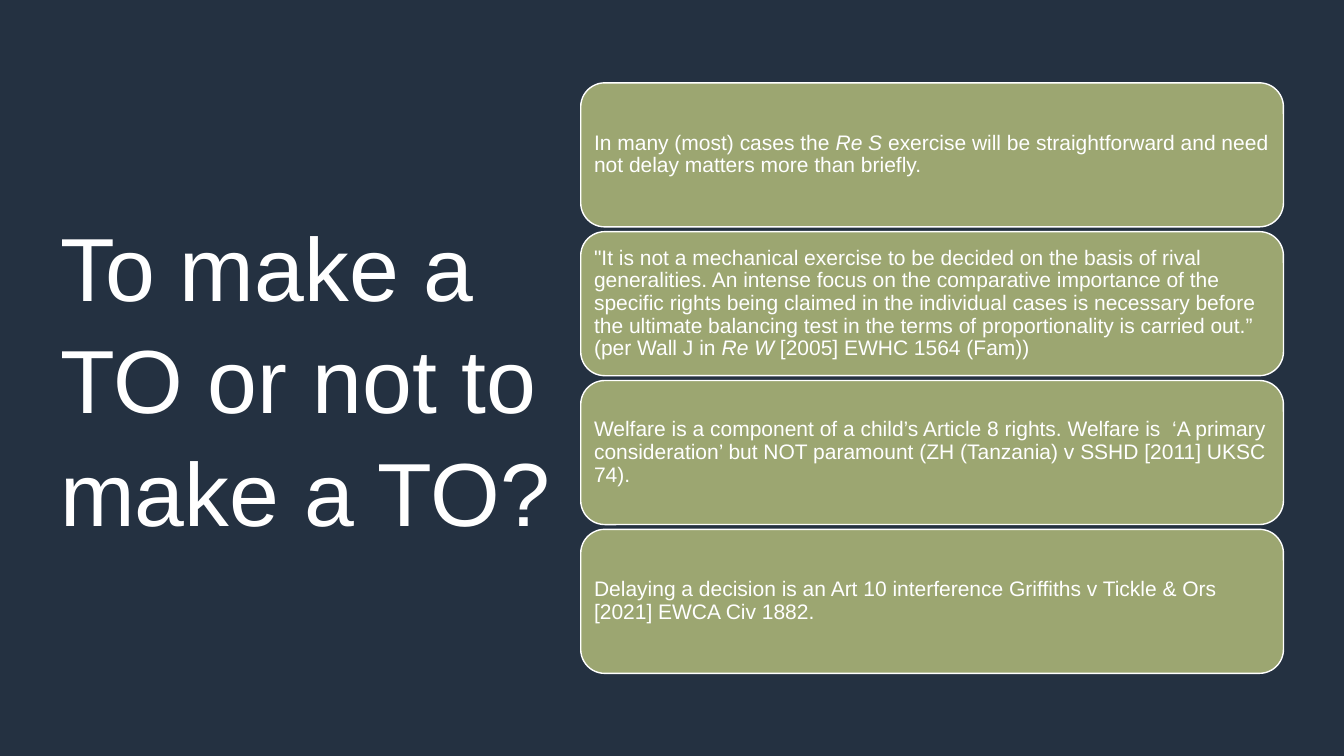
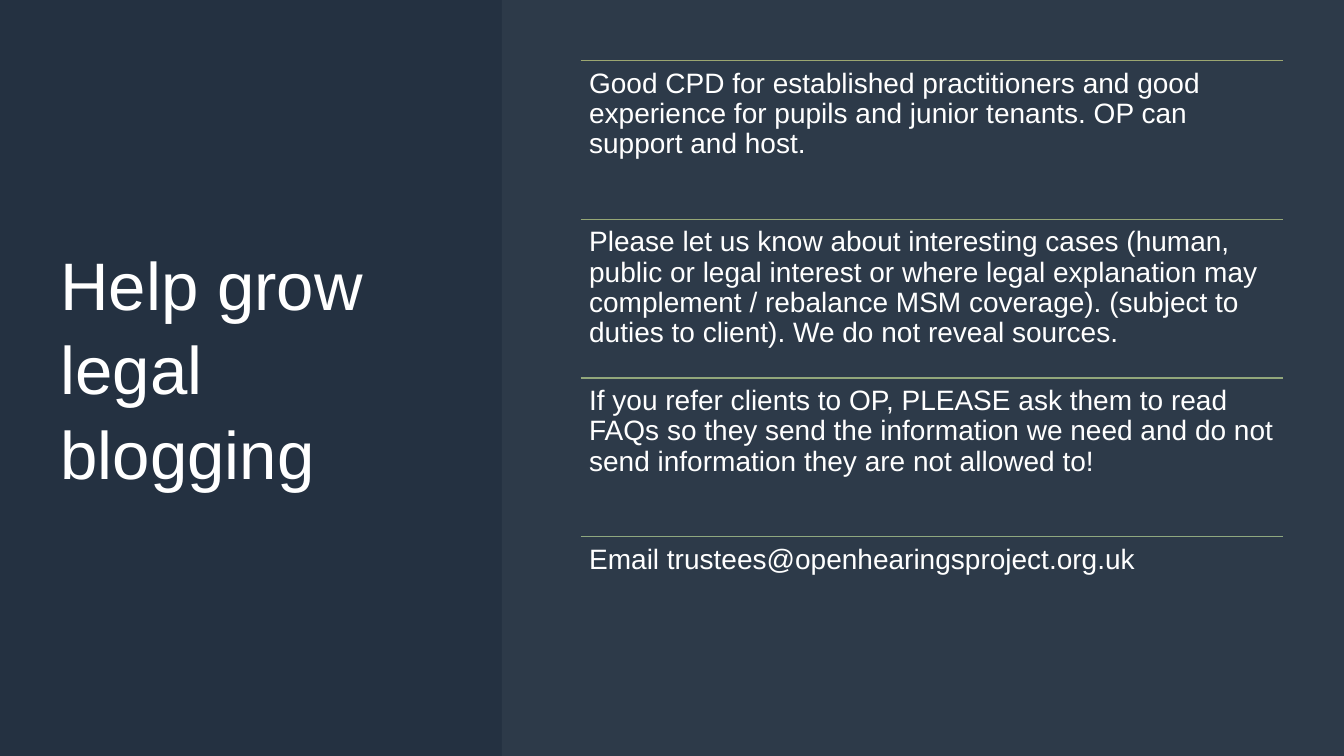
"""Build two dark slides: stacked cards and ruled notes beside a title."""
from lxml import etree
from pptx import Presentation
from pptx import util as u
from pptx.dml.color import RGBColor
from pptx.enum import shapes, text
from pptx.oxml.ns import qn

FONT = "Arial"
NAVY, WHITE, OLIVE, MIST = "243141", "FFFFFF", "9CA671", "E5EAF0"
WIDTH, HEIGHT = 960, 540
MARGIN = 43.2
COLUMN_LEFT, COLUMN_WIDTH = 414.8, 502


def colour(value):
    return RGBColor.from_string(value)


class Slides:
    def __init__(self):
        self.deck = Presentation()
        self.deck.slide_width = u.Pt(WIDTH)
        self.deck.slide_height = u.Pt(HEIGHT)
        self.page = None

    def new_page(self):
        self.page = self.deck.slides.add_slide(self.deck.slide_layouts[6])
        fill = self.page.background.fill
        fill.solid()
        fill.fore_color.rgb = colour(NAVY)

    def add_text(self, box, spans, size, inset, anchor, spacing):
        frame = box.text_frame
        frame.word_wrap = True
        frame.vertical_anchor = anchor
        frame.margin_left = frame.margin_right = u.Pt(inset)
        frame.margin_top = frame.margin_bottom = u.Pt(inset)
        para = frame.paragraphs[0]
        para.alignment = text.PP_ALIGN.LEFT
        para.line_spacing = spacing
        for words, italic in spans:
            span = para.add_run()
            span.text = words
            span.font.name = FONT
            span.font.size = u.Pt(size)
            span.font.italic = italic
            span.font.color.rgb = colour(WHITE)

    def text_box(self, left, top, width, height):
        return self.page.shapes.add_textbox(
            u.Pt(left), u.Pt(top), u.Pt(width), u.Pt(height))

    def title(self, words, top, width, height, size):
        box = self.text_box(MARGIN, top, width, height)
        self.add_text(box, [(words, False)], size, 0, text.MSO_ANCHOR.MIDDLE, 1.05)

    def shape(self, kind, left, top, width, height, fill):
        box = self.page.shapes.add_shape(
            kind, u.Pt(left), u.Pt(top), u.Pt(width), u.Pt(height))
        box.shadow.inherit = False
        box.fill.solid()
        box.fill.fore_color.rgb = colour(fill)
        return box

    def panel(self, left, opacity):
        box = self.shape(shapes.MSO_SHAPE.RECTANGLE, left, 0, WIDTH - left, HEIGHT, MIST)
        box.line.fill.background()
        tint = box._element.spPr.find(qn("a:solidFill"))[0]
        etree.SubElement(tint, qn("a:alpha"), val=str(opacity * 1000))

    def card(self, top, height, spans):
        box = self.shape(shapes.MSO_SHAPE.ROUNDED_RECTANGLE,
                         COLUMN_LEFT, top, COLUMN_WIDTH, height, OLIVE)
        box.line.color.rgb = colour(WHITE)
        box.line.width = u.Pt(1)
        self.add_text(box, spans, 15, 4.5, text.MSO_ANCHOR.MIDDLE, 0.9)

    def rule(self, top, shade):
        line = self.page.shapes.add_connector(
            shapes.MSO_CONNECTOR.STRAIGHT, u.Pt(COLUMN_LEFT), u.Pt(top),
            u.Pt(COLUMN_LEFT + COLUMN_WIDTH), u.Pt(top))
        line.line.color.rgb = colour(shade)
        line.line.width = u.Pt(1)
        etree.SubElement(line._element.spPr, qn("a:effectLst"))

    def note(self, top, height, words, shade):
        self.rule(top, shade)
        box = self.text_box(COLUMN_LEFT, top, COLUMN_WIDTH, height)
        self.add_text(box, [(words, False)], 20, 6, text.MSO_ANCHOR.TOP, 0.9)


CARDS = [
    [("In many (most) cases the ", False), ("Re S", True),
     (" exercise will be straightforward and need not delay matters more than briefly.",
      False)],
    [("\"It is not a mechanical exercise to be decided on the basis of rival generalities. "
      "An intense focus on the comparative importance of the specific rights being claimed "
      "in the individual cases is necessary before the ultimate balancing test in the terms "
      "of proportionality is carried out.” (per Wall J in ", False),
     ("Re W", True), (" [2005] EWHC 1564 (Fam))", False)],
    [("Welfare is a component of a child’s Article 8 rights. Welfare is  ‘A primary "
      "consideration’ but NOT paramount (ZH (Tanzania) v SSHD [2011] UKSC 74).", False)],
    [("Delaying a decision is an Art 10 interference Griffiths v Tickle & "
      "Ors [2021] EWCA Civ 1882.", False)],
]

NOTES = [
    ("Good CPD for established practitioners and good experience for pupils and junior "
     "tenants. OP can support and host.", OLIVE),
    ("Please let us know about interesting cases (human, public or legal interest or where "
     "legal explanation may complement / rebalance MSM coverage). (subject to duties to "
     "client). We do not reveal sources.", "96A776"),
    ("If you refer clients to OP, PLEASE ask them to read FAQs so they send the information "
     "we need and do not send information they are not allowed to!", "92A77B"),
    ("Email trustees@openhearingsproject.org.uk", "8FA880"),
]


def main():
    slides = Slides()

    slides.new_page()
    slides.title("To make a TO or not to make a TO?", 119.5, 357, 297.4, 64)
    card_height, card_gap = 102.9, 3.4
    for index, spans in enumerate(CARDS):
        slides.card(59.2 + index * (card_height + card_gap), card_height, spans)

    slides.new_page()
    slides.title("Help grow legal blogging", MARGIN, 281, 436.3, 48)
    slides.panel(358.4, 5)
    note_height = 113.4
    for index, (words, shade) in enumerate(NOTES):
        slides.note(MARGIN + index * note_height, note_height, words, shade)

    slides.deck.save("out.pptx")


if __name__ == "__main__":
    main()
